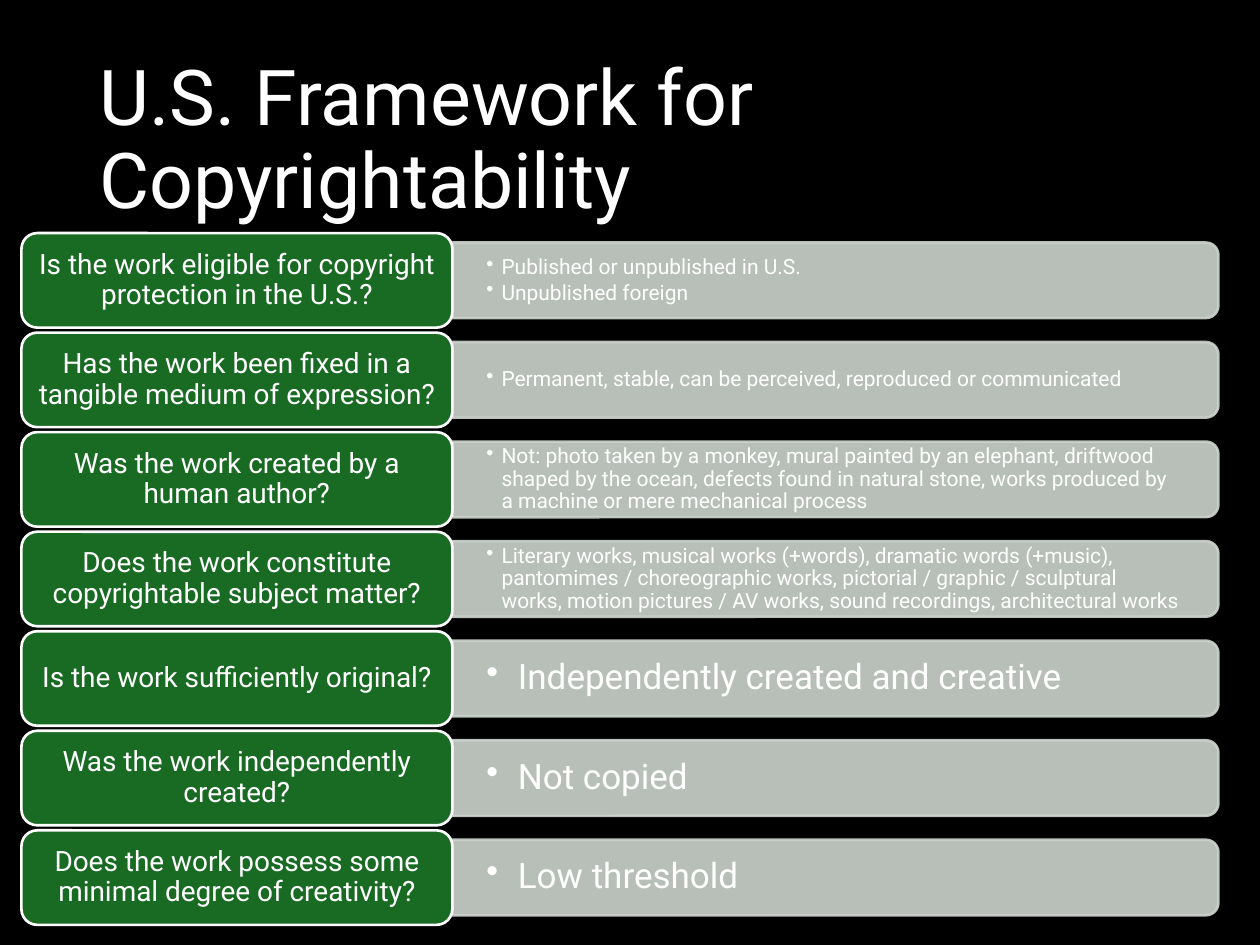
from dataclasses import dataclass

from lxml import etree
from pptx import Presentation
from pptx.dml.color import RGBColor
from pptx.enum.shapes import MSO_SHAPE
from pptx.enum.text import MSO_ANCHOR, MSO_AUTO_SIZE, PP_ALIGN
from pptx.oxml.ns import qn
from pptx.util import Inches, Pt

ROUNDED = MSO_SHAPE.ROUNDED_RECTANGLE
ROUND_TOP = MSO_SHAPE.ROUND_2_SAME_RECTANGLE
MIDDLE = MSO_ANCHOR.MIDDLE
NO_AUTOFIT = MSO_AUTO_SIZE.NONE
LEFT, CENTER = PP_ALIGN.LEFT, PP_ALIGN.CENTER

BLACK = RGBColor(0x00, 0x00, 0x00)
WHITE = RGBColor(0xFF, 0xFF, 0xFF)
GREEN = RGBColor(0x19, 0x6B, 0x24)
PALE_GREEN = RGBColor(0xCC, 0xD4, 0xCD)
FONT = "Roboto"

# Row grid, in inches
FIRST_TOP, ROW_STEP = 1.85, 0.79
QUESTION_LEFT, QUESTION_WIDTH, QUESTION_HEIGHT = 0.17, 3.42, 0.75
ANSWER_LEFT = QUESTION_LEFT + QUESTION_WIDTH
BAR_LENGTH, BAR_THICKNESS = 6.08, 0.6
ANSWER_WIDTH, ANSWER_HEIGHT = 6.05, 0.54


@dataclass(frozen=True)
class Criterion:
    question: str
    answers: tuple[str, ...]
    answer_size: int = 12
    bullet_indent: float = 0.12


CRITERIA = (
    Criterion("Is the work eligible for copyright protection in the U.S.?",
              ("Published or unpublished in U.S.", "Unpublished foreign")),
    Criterion("Has the work been fixed in a tangible medium of expression?",
              ("Permanent, stable, can be perceived, reproduced or communicated",)),
    Criterion("Was the work created by a human author?",
              ("Not: photo taken by a monkey, mural painted by an elephant, "
               "driftwood shaped by the ocean, defects found in natural stone, "
               "works produced by a machine or mere mechanical process",)),
    Criterion("Does the work constitute copyrightable subject matter?",
              ("Literary works, musical works (+words), dramatic words (+music), "
               "pantomimes / choreographic works, pictorial / graphic / sculptural "
               "works, motion pictures / AV works, sound recordings, "
               "architectural works",)),
    Criterion("Is the work sufficiently original?",
              ("Independently created and creative",), 20, 0.25),
    Criterion("Was the work independently created?", ("Not copied",), 20, 0.25),
    Criterion("Does the work possess some minimal degree of creativity?",
              ("Low threshold",), 20, 0.25),
)


def set_frame(frame, inset_x: float, inset_y: float) -> None:
    frame.word_wrap = True
    frame.auto_size = NO_AUTOFIT
    frame.vertical_anchor = MIDDLE
    frame.margin_left = frame.margin_right = Inches(inset_x)
    frame.margin_top = frame.margin_bottom = Inches(inset_y)


def set_paragraph(paragraph, text: str, size: int, alignment=LEFT) -> None:
    paragraph.text = text
    paragraph.alignment = alignment
    paragraph.line_spacing = 0.9
    paragraph.font.name = FONT
    paragraph.font.size = Pt(size)
    paragraph.font.color.rgb = WHITE


def add_bullet(paragraph, indent: float) -> None:
    properties = paragraph._p.get_or_add_pPr()
    properties.set("marL", str(Inches(indent)))
    properties.set("indent", str(-Inches(indent)))
    etree.SubElement(properties, qn("a:buChar")).set("char", "•")


def style_shape(shape, fill: RGBColor, line: RGBColor) -> None:
    shape.shadow.inherit = False
    shape.fill.solid()
    shape.fill.fore_color.rgb = fill
    shape.line.color.rgb = line
    shape.line.width = Pt(1.5)


def add_answer_bar(slide, center_y: float) -> None:
    # Rotated a quarter turn, so that the rounded corners point right
    bar = slide.shapes.add_shape(
        ROUND_TOP,
        Inches(ANSWER_LEFT + (BAR_LENGTH - BAR_THICKNESS) / 2),
        Inches(center_y - BAR_LENGTH / 2),
        Inches(BAR_THICKNESS), Inches(BAR_LENGTH))
    bar.rotation = 90
    style_shape(bar, PALE_GREEN, PALE_GREEN)
    for color in bar._element.spPr.iter(qn("a:srgbClr")):
        etree.SubElement(color, qn("a:alpha")).set("val", "90000")


def add_answers(slide, criterion: Criterion, center_y: float) -> None:
    answer_box = slide.shapes.add_textbox(
        Inches(ANSWER_LEFT), Inches(center_y - ANSWER_HEIGHT / 2),
        Inches(ANSWER_WIDTH), Inches(ANSWER_HEIGHT))
    frame = answer_box.text_frame
    set_frame(frame, 0.27, 0.14)
    for index, answer in enumerate(criterion.answers):
        paragraph = frame.add_paragraph() if index else frame.paragraphs[0]
        set_paragraph(paragraph, answer, criterion.answer_size)
        paragraph.level = 1
        paragraph.space_after = Pt(0.15 * criterion.answer_size)
        add_bullet(paragraph, criterion.bullet_indent)


def add_question(slide, question: str, top: float) -> None:
    question_box = slide.shapes.add_shape(
        ROUNDED, Inches(QUESTION_LEFT), Inches(top),
        Inches(QUESTION_WIDTH), Inches(QUESTION_HEIGHT))
    style_shape(question_box, GREEN, WHITE)
    set_frame(question_box.text_frame, 0.07, 0.03)
    set_paragraph(question_box.text_frame.paragraphs[0], question, 16, CENTER)


def main() -> None:
    presentation = Presentation()
    presentation.slide_width, presentation.slide_height = Inches(10), Inches(7.5)
    slide = presentation.slides.add_slide(presentation.slide_layouts[5])
    slide.background.fill.solid()
    slide.background.fill.fore_color.rgb = BLACK

    # Title
    title = slide.shapes.title
    title.left, title.top = Inches(0.69), Inches(0.4)
    title.width, title.height = Inches(8.62), Inches(1.45)
    set_frame(title.text_frame, 0.1, 0.05)
    set_paragraph(title.text_frame.paragraphs[0],
                  "U.S. Framework for Copyrightability", 44)

    # One row per criterion: answer bar, answers, question
    for row, criterion in enumerate(CRITERIA):
        top = FIRST_TOP + row * ROW_STEP
        center_y = top + QUESTION_HEIGHT / 2
        add_answer_bar(slide, center_y)
        add_answers(slide, criterion, center_y)
        add_question(slide, criterion.question, top)

    presentation.save("out.pptx")


if __name__ == "__main__":
    main()
